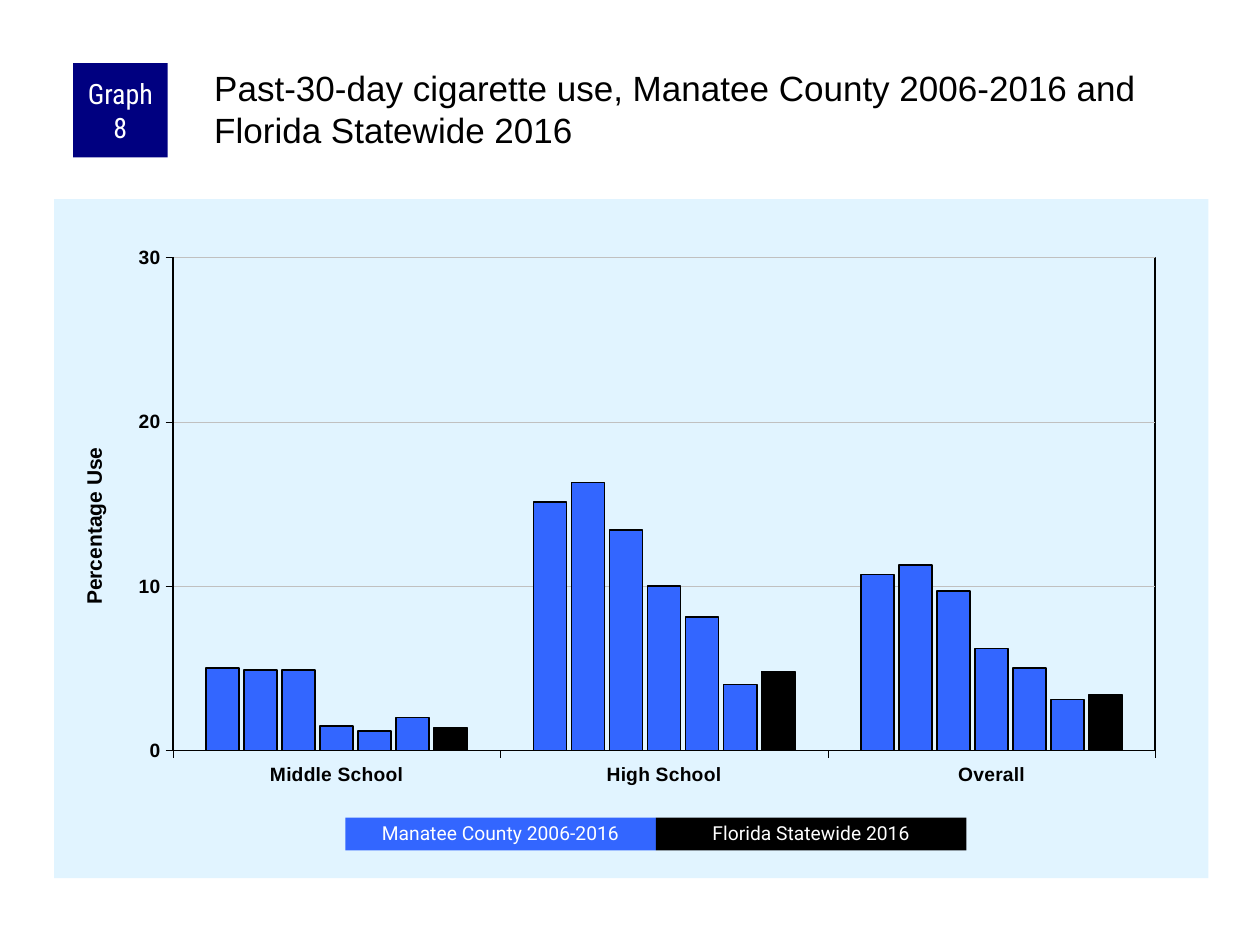
from pptx import Presentation
from pptx.chart.data import CategoryChartData
from pptx.dml.color import RGBColor
from pptx.enum.chart import XL_CHART_TYPE, XL_TICK_MARK
from pptx.enum.shapes import MSO_SHAPE
from pptx.enum.text import MSO_ANCHOR, PP_ALIGN
from pptx.oxml import parse_xml
from pptx.oxml.ns import nsdecls, qn
from pptx.util import Inches, Pt

BLACK = RGBColor(0x00, 0x00, 0x00)
WHITE = RGBColor(0xFF, 0xFF, 0xFF)
NAVY = RGBColor(0x00, 0x00, 0x80)
BLUE = RGBColor(0x33, 0x66, 0xFF)
PALE_BLUE = RGBColor(0xE1, 0xF4, 0xFF)
GREY = RGBColor(0xC0, 0xC0, 0xC0)

CATEGORIES = ["Middle School", "High School", "Overall"]
COUNTY_SURVEYS = [
    (5, 15.1, 10.7),
    (4.9, 16.3, 11.3),
    (4.9, 13.4, 9.7),
    (1.5, 10, 6.2),
    (1.2, 8.1, 5),
    (2, 4, 3.1),
]
STATEWIDE = (1.4, 4.8, 3.4)


def set_font(font, size, color, name="Arial", bold=False):
    font.size = Pt(size)
    font.name = name
    font.bold = bold
    font.color.rgb = color


def set_line(line, color, width):
    line.color.rgb = color
    line.width = Pt(width)


def layout_xml(inner=False, **fractions):
    """Manual chart layout from x, y and optional w, h, as fractions of the chart."""
    target = '<c:layoutTarget val="inner"/>' if inner else ""
    modes = '<c:xMode val="edge"/><c:yMode val="edge"/>'
    values = "".join(f'<c:{k} val="{v}"/>' for k, v in fractions.items())
    return parse_xml(f'<c:layout {nsdecls("c")}><c:manualLayout>{target}{modes}'
                     f'{values}</c:manualLayout></c:layout>')


def drop_layout(element):
    for old in element.findall(qn("c:layout")):
        element.remove(old)


def add_box(slide, box, text, fill, font_name, size):
    sp = slide.shapes.add_shape(MSO_SHAPE.RECTANGLE, *map(Inches, box))
    sp.shadow.inherit = False
    sp.fill.solid()
    sp.fill.fore_color.rgb = fill
    sp.line.fill.background()
    tf = sp.text_frame
    tf.text = text
    tf.word_wrap = True
    tf.vertical_anchor = MSO_ANCHOR.MIDDLE
    tf.margin_left = tf.margin_right = Inches(0.05)
    tf.margin_top = tf.margin_bottom = 0
    p = tf.paragraphs[0]
    p.alignment = PP_ALIGN.CENTER
    set_font(p.runs[0].font, size, WHITE, font_name)
    return sp


def add_header(slide, left, top, width):
    add_box(slide, (left, top, 0.75, 0.75), "Graph 8", NAVY, "Roboto Condensed", 16)
    indent = 1.09
    tb = slide.shapes.add_textbox(Inches(left + indent), Inches(top),
                                  Inches(width - indent), Inches(0.83))
    tf = tb.text_frame
    tf.word_wrap = True
    tf.margin_left = tf.margin_top = Inches(0.03)
    tf.margin_right = tf.margin_bottom = 0
    tf.text = ("Past-30-day cigarette use, Manatee County 2006-2016 "
               "and Florida Statewide 2016")
    set_font(tf.paragraphs[0].runs[0].font, 20, BLACK)


def style_axes(chart):
    for axis in (chart.category_axis, chart.value_axis):
        axis.major_tick_mark = XL_TICK_MARK.OUTSIDE
        axis.minor_tick_mark = XL_TICK_MARK.NONE
        set_font(axis.tick_labels.font, 11, BLACK, bold=True)
        set_line(axis.format.line, BLACK, 0.25)
    axis = chart.value_axis
    axis.minimum_scale, axis.maximum_scale, axis.major_unit = 0, 30, 10
    set_line(axis.major_gridlines.format.line, GREY, 0.25)
    tf = axis.axis_title.text_frame
    tf.text = "Percentage Use"
    set_font(tf.paragraphs[0].runs[0].font, 12, BLACK, bold=True)
    tf._txBody.find(qn("a:bodyPr")).set("rot", "-5400000")
    title = axis.axis_title._element
    drop_layout(title)
    title.find(qn("c:tx")).addnext(layout_xml(x=0.02, y=0.36))


def style_areas(chart):
    """Fill the chart area, and place and outline the plot area."""
    chart_el = chart._chartSpace.find(qn("c:chart"))
    chart_el.addnext(parse_xml(
        f'<c:spPr {nsdecls("c", "a")}><a:solidFill><a:srgbClr val="{PALE_BLUE}"/>'
        '</a:solidFill><a:ln><a:noFill/></a:ln></c:spPr>'))
    plot_area = chart_el.find(qn("c:plotArea"))
    drop_layout(plot_area)
    plot_area.insert(0, layout_xml(inner=True, x=0.103, y=0.086, w=0.851, h=0.726))
    plot_area.append(parse_xml(
        f'<c:spPr {nsdecls("c", "a")}><a:noFill/><a:ln w="{Pt(1)}"><a:solidFill>'
        f'<a:srgbClr val="{BLACK}"/></a:solidFill></a:ln></c:spPr>'))


def add_usage_chart(slide, left, top, width, height):
    data = CategoryChartData()
    data.categories = CATEGORIES
    for i, values in enumerate(COUNTY_SURVEYS + [STATEWIDE], 1):
        data.add_series(f"Series {i}", values)
    frame = slide.shapes.add_chart(XL_CHART_TYPE.COLUMN_CLUSTERED, Inches(left),
                                   Inches(top), Inches(width), Inches(height), data)
    chart = frame.chart
    chart.has_title = chart.has_legend = False
    set_font(chart.font, 8, BLACK)
    plot = chart.plots[0]
    plot.gap_width, plot.overlap = 200, -15
    plot.vary_by_categories = False
    for i, series in enumerate(plot.series):
        series.invert_if_negative = False
        series.format.fill.solid()
        series.format.fill.fore_color.rgb = BLUE if i < len(COUNTY_SURVEYS) else BLACK
        set_line(series.format.line, BLACK, 1)
    style_axes(chart)
    style_areas(chart)


def add_legend(slide, left, top, width, height):
    entries = [("Manatee County 2006-2016", BLUE), ("Florida Statewide 2016", BLACK)]
    w = width / len(entries)
    for i, (label, fill) in enumerate(entries):
        sp = add_box(slide, (left + i * w, top, w, height), label, fill, "Roboto", 11)
        sp.text_frame.paragraphs[0].line_spacing = 0.9


def main():
    prs = Presentation()
    prs.slide_width, prs.slide_height = Inches(10), Inches(7.5)
    slide = prs.slides.add_slide(prs.slide_layouts[6])
    add_usage_chart(slide, 0.43, 1.58, 9.16, 5.39)
    add_header(slide, 0.58, 0.5, 9.01)
    add_legend(slide, 2.74, 6.49, 4.93, 0.26)
    prs.save("out.pptx")


if __name__ == "__main__":
    main()
